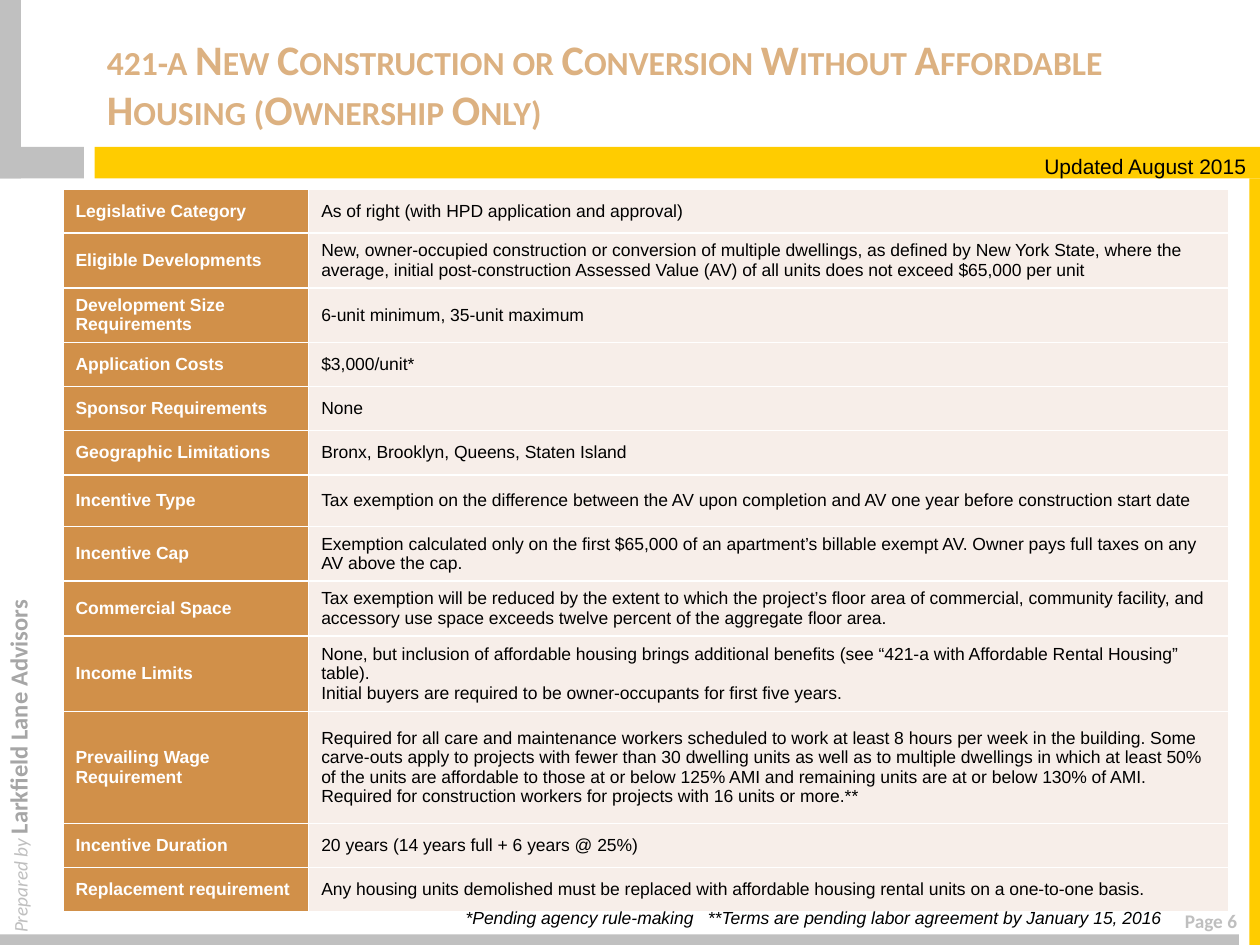
"""Build the 421-a ownership tax incentive summary slide."""
from dataclasses import dataclass, replace
from typing import NamedTuple

from lxml import etree
from pptx import Presentation
from pptx import util as u
from pptx.dml.color import RGBColor
from pptx.enum import shapes, text
from pptx.oxml.ns import qn


@dataclass(frozen=True)
class Style:
    size: float
    font: str
    color: str
    bold: bool = False
    italic: bool = False
    small_caps: bool = False
    tracking: float = 0


@dataclass(frozen=True)
class Theme:
    gray: str = "C0C0C0"
    yellow: str = "FFCC00"
    label_fill: str = "D19049"
    detail_fill: str = "F7EEE9"
    border: str = "FFFFFF"
    title: Style = Style(24, "Calibri", "DCB181", bold=True, small_caps=True)
    page: Style = Style(11, "Calibri", "BFBFBF", bold=True)
    prepared: Style = Style(11, "Calibri", "BFBFBF", italic=True)
    firm: Style = Style(14, "Calibri", "A6A6A6", bold=True)
    label: Style = Style(10, "Arial", "FFFFFF", bold=True)
    detail: Style = Style(10, "Arial", "000000")
    note: Style = Style(10, "Arial", "000000", italic=True)
    updated: Style = Style(12, "Arial", "000000")


THEME = Theme()
SHORT, MEDIUM, DOUBLE, TALL = 25.2, 29.5, 30.2, 64
COLUMNS = (140.4, 525.6)


class Frame(NamedTuple):
    left: float
    top: float
    width: float
    height: float
    rotation: float = 0


class Bar(NamedTuple):
    frame: Frame
    color: str


class Span(NamedTuple):
    words: str
    style: Style


class Label(NamedTuple):
    frame: Frame
    spans: tuple[Span, ...]
    align: text.PP_ALIGN = text.PP_ALIGN.LEFT
    anchor: text.MSO_ANCHOR = text.MSO_ANCHOR.TOP
    wrap: bool = True
    grow: bool = True


class Term(NamedTuple):
    height: float
    name: str
    details: tuple[str, ...]


BARS = (
    Bar(Frame(0, 84, 48, 18), THEME.gray),
    Bar(Frame(54, 84, 666, 18), THEME.yellow),
    Bar(Frame(714, 102, 6, 438), THEME.yellow),
    Bar(Frame(0, 534, 708, 6), THEME.gray),
    Bar(Frame(-45, 45, 102, 12, 270), THEME.gray),
)

LABELS = (
    Label(Frame(474, 516, 240, 20.6), (Span("Page 6", THEME.page),), text.PP_ALIGN.RIGHT),
    Label(Frame(-124.6, 393.1, 270, 24.2, 270),
          (Span("Prepared by ", THEME.prepared), Span("Larkfield Lane Advisors", THEME.firm))),
    Label(Frame(54, 12, 654, 72),
          (Span("421-a New Construction or Conversion Without Affordable Housing "
                "(Ownership Only)", THEME.title),),
          anchor=text.MSO_ANCHOR.MIDDLE, grow=False),
)

NOTES = (
    Label(Frame(257.8, 514.8, 412.6, 19.4),
          (Span("*Pending agency rule-making", THEME.note),
           Span(" ", replace(THEME.note, tracking=5.6)),
           Span("**Terms are pending labor agreement by January 15, 2016", THEME.note)),
          text.PP_ALIGN.RIGHT, wrap=False),
    Label(Frame(589.7, 84.2, 130.3, 21.8),
          (Span("Updated August 2015", THEME.updated),), wrap=False),
)

TERMS = (
    Term(SHORT, "Legislative Category", ("As of right (with HPD application and approval)",)),
    Term(DOUBLE, "Eligible Developments", (
        "New, owner-occupied construction or conversion of multiple dwellings, as defined by "
        "New York State, where the average, initial post-construction Assessed Value (AV) of "
        "all units does not exceed $65,000 per unit",)),
    Term(DOUBLE, "Development Size Requirements", ("6-unit minimum, 35-unit maximum",)),
    Term(SHORT, "Application Costs", ("$3,000/unit*",)),
    Term(SHORT, "Sponsor Requirements", ("None",)),
    Term(SHORT, "Geographic Limitations", ("Bronx, Brooklyn, Queens, Staten Island",)),
    Term(MEDIUM, "Incentive Type", (
        "Tax exemption on the difference between the AV upon completion and AV one year "
        "before construction start date",)),
    Term(DOUBLE, "Incentive Cap", (
        "Exemption calculated only on the first $65,000 of an apartment’s billable exempt AV. "
        "Owner pays full taxes on any AV above the cap.",)),
    Term(DOUBLE, "Commercial Space", (
        "Tax exemption will be reduced by the extent to which the project’s floor area of "
        "commercial, community facility, and accessory use space exceeds twelve percent of "
        "the aggregate floor area.",)),
    Term(MEDIUM, "Income Limits", (
        "None, but inclusion of affordable housing brings additional benefits (see “421-a "
        "with Affordable Rental Housing” table).",
        "Initial buyers are required to be owner-occupants for first five years.")),
    Term(TALL, "Prevailing Wage Requirement", (
        "Required for all care and maintenance workers scheduled to work at least 8 hours per "
        "week in the building. Some carve-outs apply to projects with fewer than 30 dwelling "
        "units as well as to multiple dwellings in which at least 50% of the units are "
        "affordable to those at or below 125% AMI and remaining units are at or below 130% "
        "of AMI.",
        "Required for construction workers for projects with 16 units or more.**")),
    Term(SHORT, "Incentive Duration", ("20 years (14 years full + 6 years @ 25%)",)),
    Term(SHORT, "Replacement requirement", (
        "Any housing units demolished must be replaced with affordable housing rental units "
        "on a one-to-one basis.",)),
)


def place(frame: Frame) -> list[u.Length]:
    return [u.Pt(length) for length in frame[:4]]


def add_span(para, span: Span) -> None:
    run, style = para.add_run(), span.style
    run.text = span.words
    run.font.size, run.font.name = u.Pt(style.size), style.font
    run.font.bold, run.font.italic = style.bold, style.italic
    run.font.color.rgb = RGBColor.from_string(style.color)
    properties = run._r.get_or_add_rPr()
    if style.small_caps:
        properties.set("cap", "small")
    if style.tracking:
        properties.set("spc", str(round(style.tracking * 100)))


def add_bar(page, bar: Bar) -> None:
    shape = page.shapes.add_shape(shapes.MSO_SHAPE.RECTANGLE, *place(bar.frame))
    shape.rotation = bar.frame.rotation
    shape.shadow.inherit = False
    shape.fill.solid()
    shape.fill.fore_color.rgb = RGBColor.from_string(bar.color)
    shape.line.fill.background()


def add_label(page, label: Label) -> None:
    box = page.shapes.add_textbox(*place(label.frame))
    box.rotation = label.frame.rotation
    frame = box.text_frame
    frame.word_wrap, frame.vertical_anchor = label.wrap, label.anchor
    sizing = text.MSO_AUTO_SIZE
    frame.auto_size = sizing.SHAPE_TO_FIT_TEXT if label.grow else sizing.NONE
    para = frame.paragraphs[0]
    para.alignment = label.align
    for span in label.spans:
        add_span(para, span)


def fill_cell(cell, paragraphs: tuple[str, ...], style: Style, color: str) -> None:
    properties = cell._tc.get_or_add_tcPr()
    for side in ("lnL", "lnR", "lnT", "lnB"):
        line = etree.SubElement(properties, qn(f"a:{side}"), w=str(u.Pt(1)))
        solid = etree.SubElement(line, qn("a:solidFill"))
        etree.SubElement(solid, qn("a:srgbClr"), val=THEME.border)
    cell.fill.solid()
    cell.fill.fore_color.rgb = RGBColor.from_string(color)
    cell.vertical_anchor = text.MSO_ANCHOR.MIDDLE
    for index, words in enumerate(paragraphs):
        para = cell.text_frame.add_paragraph() if index else cell.text_frame.paragraphs[0]
        add_span(para, Span(words, style))


def add_terms(page, terms: tuple[Term, ...]) -> None:
    frame = Frame(36, 108, sum(COLUMNS), sum(term.height for term in terms))
    table = page.shapes.add_table(len(terms), len(COLUMNS), *place(frame)).table
    table.first_row = table.horz_banding = False
    for column, width in zip(table.columns, COLUMNS):
        column.width = u.Pt(width)
    for row, term in zip(table.rows, terms):
        row.height = u.Pt(term.height)
        fill_cell(row.cells[0], (term.name,), THEME.label, THEME.label_fill)
        fill_cell(row.cells[1], term.details, THEME.detail, THEME.detail_fill)


def main() -> None:
    deck = Presentation()
    deck.slide_width, deck.slide_height = u.Pt(720), u.Pt(540)
    page = deck.slides.add_slide(deck.slide_layouts[6])
    for bar in BARS:
        add_bar(page, bar)
    for label in LABELS:
        add_label(page, label)
    add_terms(page, TERMS)
    for note in NOTES:
        add_label(page, note)
    deck.save("out.pptx")


if __name__ == "__main__":
    main()
